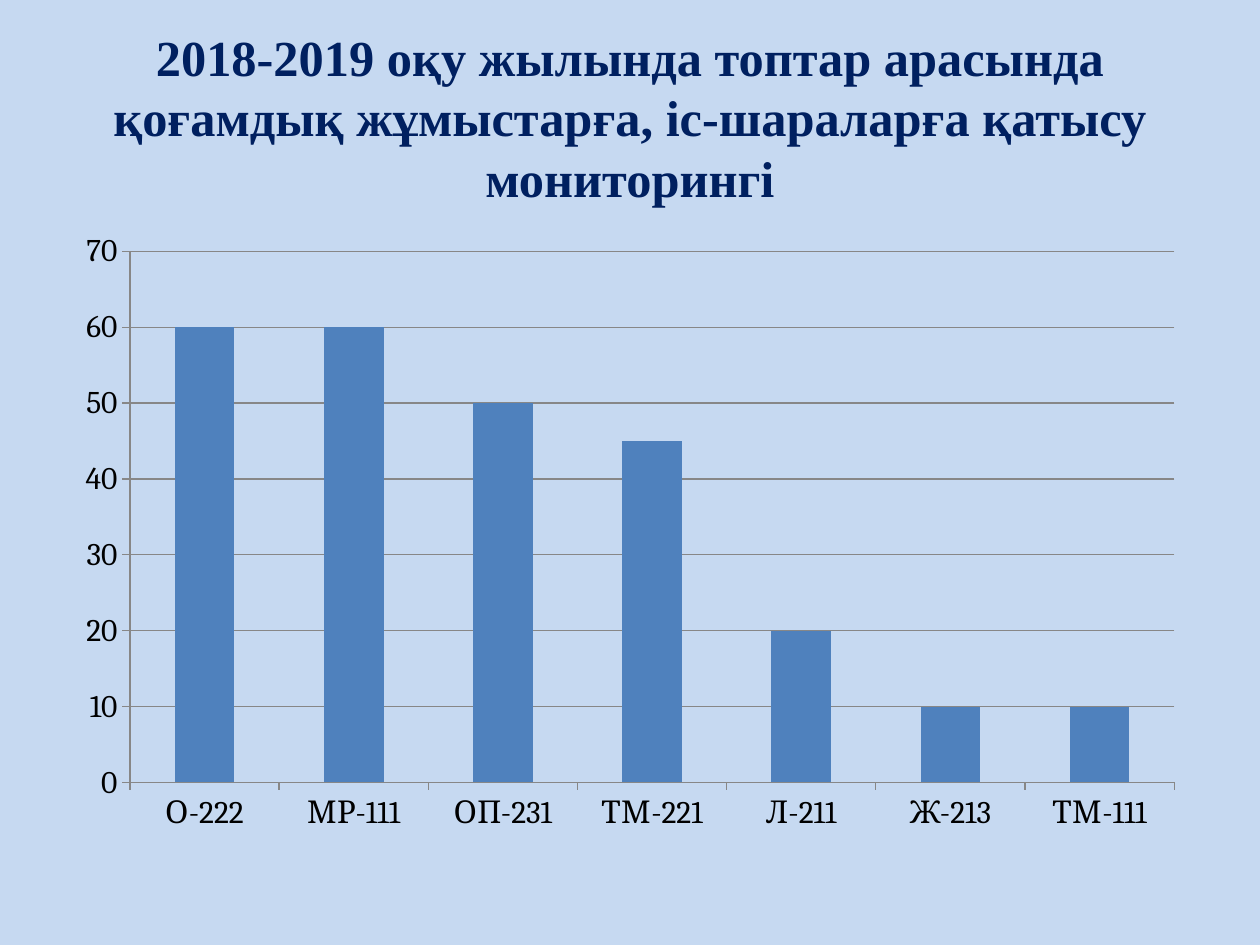
from pptx import Presentation
from pptx import util as u
from pptx.chart import data as chart_data
from pptx.dml import color
from pptx.enum import chart as kinds, text

GROUPS = {"О-222": 60, "МР-111": 60, "ОП-231": 50, "ТМ-221": 45,
          "Л-211": 20, "Ж-213": 10, "ТМ-111": 10}
TITLE = ("2018-2019 оқу жылында топтар арасында қоғамдық жұмыстарға, "
         "іс-шараларға қатысу мониторингі")


def paint(target, value):
    """Give a fill a solid colour from a hex string."""
    target.solid()
    target.fore_color.rgb = color.RGBColor.from_string(value)


def style_font(font, name, size, value, bold=False):
    """Set the face, size, colour and weight of a font."""
    font.name = name
    font.size = u.Pt(size)
    font.bold = bold
    paint(font.fill, value)


def place_title(page, left, top, width, height):
    """Move and format the title placeholder."""
    title = page.shapes.title
    title.left, title.top, title.width, title.height = left, top, width, height
    frame = title.text_frame
    frame.text = TITLE
    frame.word_wrap = True
    frame.auto_size = text.MSO_AUTO_SIZE.NONE
    frame.vertical_anchor = text.MSO_ANCHOR.MIDDLE
    para = frame.paragraphs[0]
    para.alignment = text.PP_ALIGN.CENTER
    style_font(para.font, "Times New Roman", 28.8, "002060", bold=True)


def place_chart(page, left, top, width, height):
    """Add the column chart of participation by group."""
    data = chart_data.CategoryChartData()
    data.categories = list(GROUPS)
    data.add_series("Series 1", list(GROUPS.values()))
    chart = page.shapes.add_chart(
        kinds.XL_CHART_TYPE.COLUMN_STACKED, left, top, width, height, data).chart
    chart.has_legend = False
    chart.has_title = False
    style_font(chart.font, "Cambria", 18, "000000")
    plot = chart.plots[0]
    plot.vary_by_categories = False
    plot.gap_width = 150
    plot.overlap = 100
    paint(plot.series[0].format.fill, "4F81BD")
    scale = chart.value_axis
    scale.minimum_scale, scale.maximum_scale, scale.major_unit = 0, 70, 10
    scale.has_major_gridlines = True
    for axis in (chart.category_axis, scale):
        axis.major_tick_mark = kinds.XL_TICK_MARK.OUTSIDE
        paint(axis.format.line.fill, "878787")
    paint(scale.major_gridlines.format.line.fill, "878787")


def main():
    """Build and save the slide."""
    deck = Presentation()
    deck.slide_width, deck.slide_height = u.Inches(10), u.Inches(7.5)
    page = deck.slides.add_slide(deck.slide_layouts.get_by_name("Title Only"))
    paint(page.background.fill, "C6D9F1")
    left, width = u.Inches(0.5), u.Inches(9)
    place_title(page, left, u.Inches(0.3), width, u.Inches(1.25))
    place_chart(page, left, u.Inches(1.75), width, u.Inches(4.95))
    deck.save("out.pptx")


if __name__ == "__main__":
    main()
